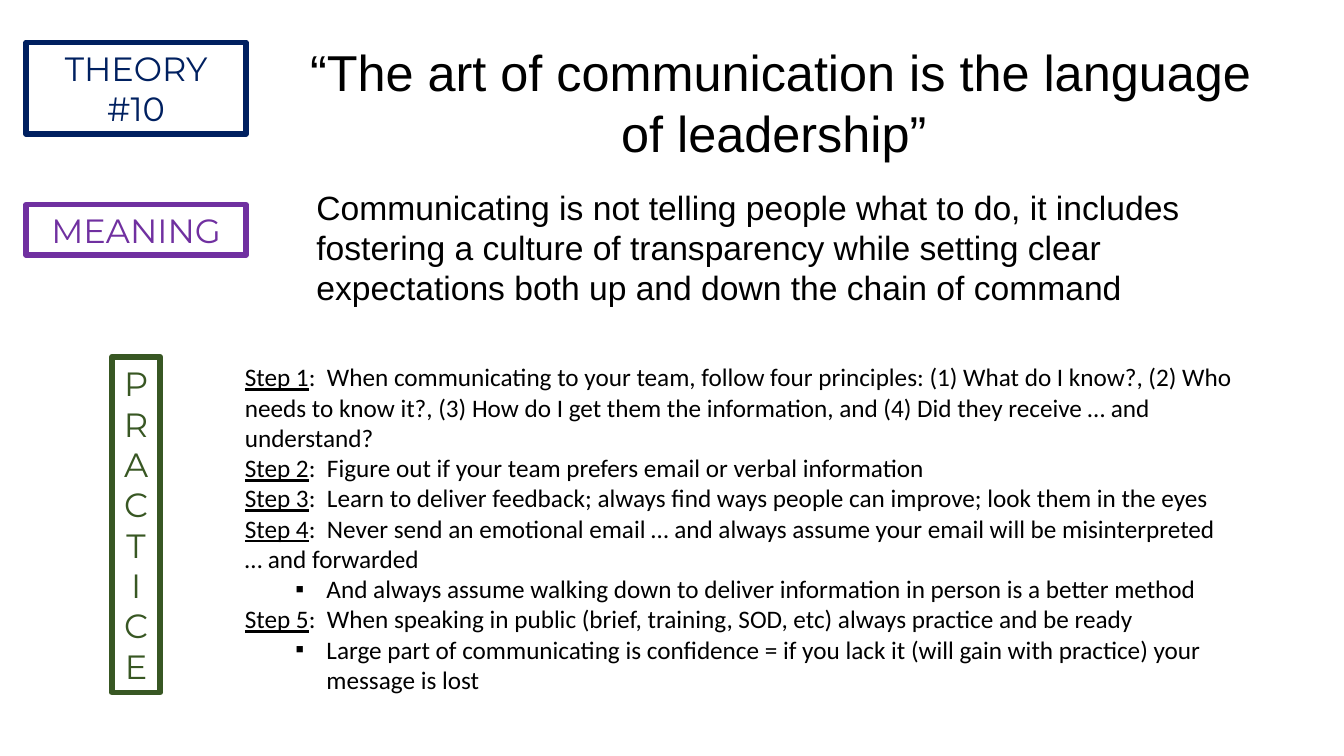
from dataclasses import dataclass

from lxml import etree
from pptx import Presentation
from pptx.dml.color import RGBColor
from pptx.enum.shapes import MSO_SHAPE
from pptx.enum.text import MSO_ANCHOR, PP_ALIGN
from pptx.oxml.ns import qn
from pptx.slide import Slide
from pptx.text.text import TextFrame, _Paragraph
from pptx.util import Emu, Pt

RECTANGLE = MSO_SHAPE.RECTANGLE
LEFT, CENTER = PP_ALIGN.LEFT, PP_ALIGN.CENTER
TOP, MIDDLE = MSO_ANCHOR.TOP, MSO_ANCHOR.MIDDLE

EMU_PER_PX = 9144  # 100 px to the inch
COLORS = {"theory": "002060", "meaning": "7030A0", "practice": "385723", "text": "000000"}
BULLET_MARGIN, BULLET_HANG = 81, 31


@dataclass(frozen=True)
class Box:
    left: int
    top: int
    width: int
    height: int

    def emu(self) -> list[Emu]:
        return [px(n) for n in (self.left, self.top, self.width, self.height)]


@dataclass(frozen=True)
class Label:
    text: str
    box: Box
    color: str


@dataclass(frozen=True)
class Statement:
    text: str
    box: Box
    size: int
    align: PP_ALIGN


@dataclass(frozen=True)
class Step:
    text: str
    detail: str = ""


LABELS = [
    Label("THEORY #10", Box(26, 42, 218, 91), "theory"),
    Label("MEANING", Box(26, 203, 218, 50), "meaning"),
    Label("PRACTICE", Box(111, 354, 48, 333), "practice"),
]
STATEMENTS = [
    Statement("“The art of communication is the language of leadership” ",
              Box(283, 36, 983, 131), 36, CENTER),
    Statement("Communicating is not telling people what to do, it includes fostering a culture of "
              "transparency while setting clear expectations both up and down the chain of command",
              Box(304, 180, 920, 131), 24, LEFT),
]
STEPS_BOX = Box(233, 354, 1002, 374)
STEPS = [
    Step("When communicating to your team, follow four principles: (1) What do I know?, (2) Who "
         "needs to know it?, (3) How do I get them the information, and (4) Did they receive … "
         "and understand?"),
    Step("Figure out if your team prefers email or verbal information"),
    Step("Learn to deliver feedback; always find ways people can improve; look them in the eyes"),
    Step("Never send an emotional email … and always assume your email will be misinterpreted … "
         "and forwarded",
         "And always assume walking down to deliver information in person is a better method"),
    Step("When speaking in public (brief, training, SOD, etc) always practice and be ready",
         "Large part of communicating is confidence = if you lack it (will gain with practice) "
         "your message is lost"),
]


def px(n: int) -> Emu:
    return Emu(n * EMU_PER_PX)


def write(paragraph: _Paragraph, text: str, *, font: str, size: int, color: str = "text",
          underline: bool = False, align: PP_ALIGN = LEFT) -> None:
    paragraph.alignment = align
    run = paragraph.add_run()
    run.text = text
    run.font.name = font
    run.font.size = Pt(size)
    run.font.underline = underline
    run.font.color.rgb = RGBColor.from_string(COLORS[color])


def add_bullet(paragraph: _Paragraph) -> None:
    paragraph.level = 1
    properties = paragraph._p.get_or_add_pPr()
    properties.set("marL", str(px(BULLET_MARGIN)))
    properties.set("indent", str(-px(BULLET_HANG)))
    etree.SubElement(properties, qn("a:buFont")).set("typeface", "Arial")
    etree.SubElement(properties, qn("a:buChar")).set("char", "▪")


def add_label(slide: Slide, label: Label) -> None:
    frame = slide.shapes.add_shape(RECTANGLE, *label.box.emu())
    frame.shadow.inherit = False
    frame.fill.background()
    frame.line.color.rgb = RGBColor.from_string(COLORS[label.color])
    frame.line.width = Pt(4)
    frame.text_frame.word_wrap = True
    frame.text_frame.vertical_anchor = MIDDLE
    write(frame.text_frame.paragraphs[0], label.text, font="Montserrat", size=24,
          color=label.color, align=CENTER)


def add_text_frame(slide: Slide, box: Box) -> TextFrame:
    frame = slide.shapes.add_textbox(*box.emu()).text_frame
    frame.word_wrap = True
    frame.vertical_anchor = TOP
    return frame


def add_steps(slide: Slide) -> None:
    frame = add_text_frame(slide, STEPS_BOX)
    for number, step in enumerate(STEPS, start=1):
        paragraph = frame.paragraphs[0] if number == 1 else frame.add_paragraph()
        write(paragraph, f"Step {number}", font="Calibri", size=18, underline=True)
        write(paragraph, f":  {step.text}", font="Calibri", size=18)
        if step.detail:
            detail = frame.add_paragraph()
            add_bullet(detail)
            write(detail, step.detail, font="Calibri", size=18)


def main() -> None:
    deck = Presentation()
    deck.slide_width, deck.slide_height = px(1333), px(750)
    slide = deck.slides.add_slide(deck.slide_layouts[6])
    for label in LABELS:
        add_label(slide, label)
    for statement in STATEMENTS:
        frame = add_text_frame(slide, statement.box)
        write(frame.paragraphs[0], statement.text, font="Arial", size=statement.size,
              align=statement.align)
    add_steps(slide)
    deck.save("out.pptx")


if __name__ == "__main__":
    main()
